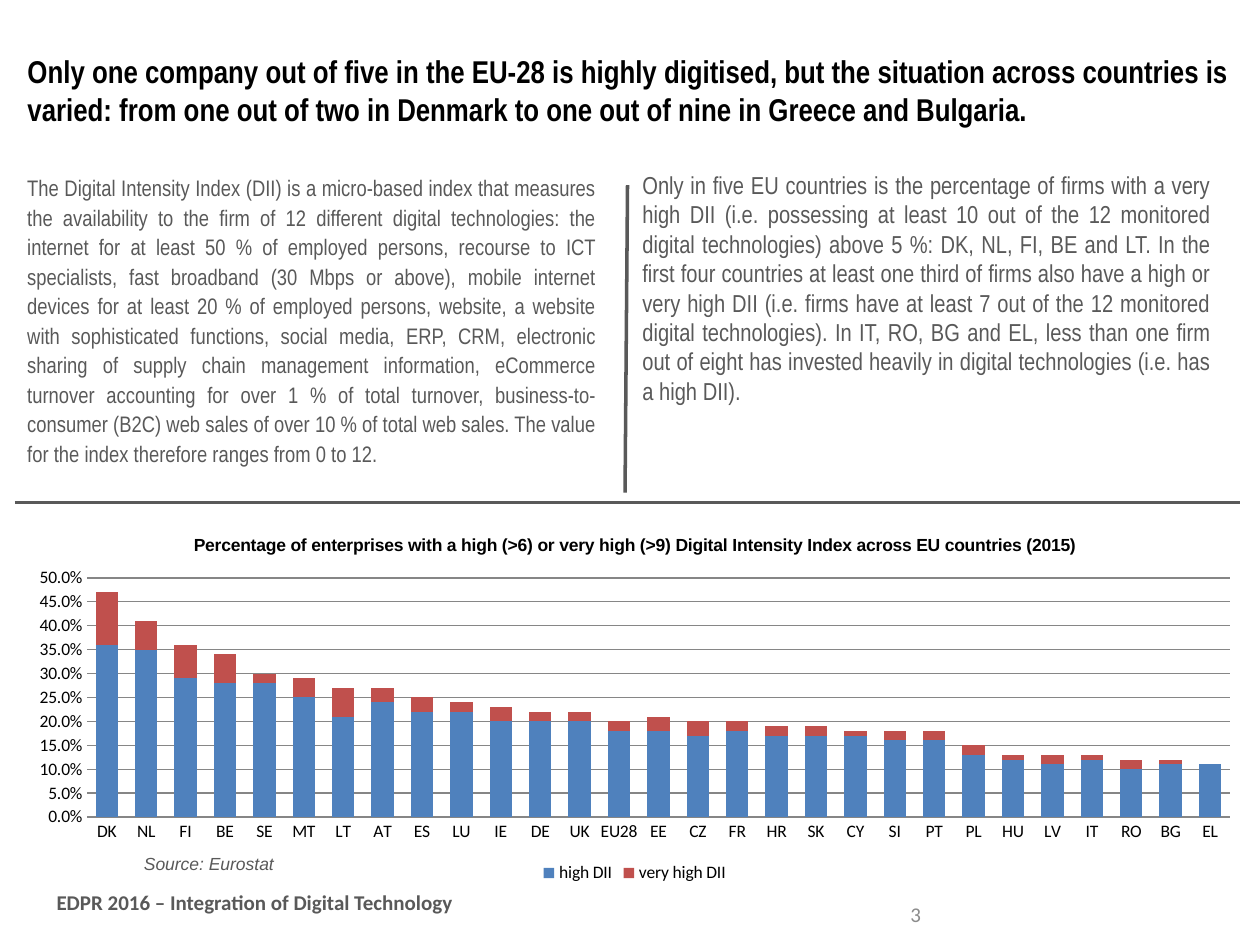
from lxml import etree
from pptx import Presentation
from pptx.chart.data import CategoryChartData
from pptx.dml.color import RGBColor
from pptx.enum.chart import XL_CHART_TYPE as ChartType, XL_LEGEND_POSITION as LegendPosition, XL_TICK_MARK as TickMark
from pptx.enum.shapes import MSO_CONNECTOR as Connector
from pptx.enum.text import MSO_ANCHOR as Anchor, MSO_AUTO_SIZE as AutoSize, PP_ALIGN as Align
from pptx.oxml.ns import qn
from pptx.util import Cm, Pt

COLORS = {"black": "000000", "text": "595959", "number": "8C8C8C",
          "grid": "868686", "high": "4F81BD", "very high": "C0504D"}


def color(name):
    return RGBColor.from_string(COLORS[name])


def write(box, place, text, align, anchor, spacing, name, size, shade, **style):
    """Place a text shape and fill it with one formatted paragraph."""
    box.left, box.top, box.width, box.height = [Cm(value) for value in place]
    frame = box.text_frame
    frame.word_wrap = True
    frame.auto_size = AutoSize.NONE
    frame.vertical_anchor = anchor
    para = frame.paragraphs[0]
    para.alignment = align
    para.line_spacing = spacing
    span = para.add_run()
    span.text = text
    span.font.color.rgb = color(shade)
    for key, value in {"name": name, "size": Pt(size), **style}.items():
        setattr(span.font, key, value)


deck = Presentation()
deck.slide_width, deck.slide_height = Cm(25.4), Cm(19.05)
page = deck.slides.add_slide(deck.slide_layouts[5])

# Dividers
for ends in [(12.65, 3.73, 12.6, 9.93), (0.3, 10.13, 25, 10.13)]:
    divider = page.shapes.add_connector(Connector.STRAIGHT, *[Cm(value) for value in ends])
    divider.line.color.rgb = color("text")
    divider.line.width = Pt(2)
    etree.SubElement(divider._element.spPr, qn("a:effectLst"))

# Texts
write(page.shapes.title, (0.3, 0.3, 24.79, 3.02),
      "Only one company out of five in the EU-28 is highly digitised, but the situation across "
      "countries is varied: from one out of two in Denmark to one out of nine in Greece and Bulgaria.",
      Align.LEFT, Anchor.MIDDLE, 1, "Arial Narrow", 18, "black", bold=True)

index_text = (
    "The Digital Intensity Index (DII) is a micro-based index that measures the availability to the "
    "firm of 12 different digital technologies: the internet for at least 50 % of employed persons, "
    "recourse to ICT specialists, fast broadband (30 Mbps or above), mobile internet devices for at "
    "least 20 % of employed persons, website, a website with sophisticated functions, social media, "
    "ERP, CRM, electronic sharing of supply chain management information, eCommerce turnover "
    "accounting for over 1 % of total turnover, business-to-consumer (B2C) web sales of over 10 % of "
    "total web sales. The value for the index therefore ranges from 0 to 12.")
countries_text = (
    "Only in five EU countries is the percentage of firms with a very high DII (i.e. possessing at "
    "least 10 out of the 12 monitored digital technologies) above 5 %: DK, NL, FI, BE and LT. In the "
    "first four countries at least one third of firms also have a high or very high DII (i.e. firms "
    "have at least 7 out of the 12 monitored digital technologies). In IT, RO, BG and EL, less than "
    "one firm out of eight has invested heavily in digital technologies (i.e. has a high DII).")

texts = [
    ((17.3, 17.91, 1.52, 1.02), "3", Align.RIGHT, Anchor.MIDDLE, 1, "Calibri", 12, "number", {}),
    ((0.3, 3.33, 11.96, 6.4), index_text, Align.JUSTIFY, Anchor.TOP, 1.1, "Arial Narrow", 12.8, "text", {}),
    ((-1.9, 16.92, 12.22, 0.99), "Source: Eurostat", Align.CENTER, Anchor.MIDDLE, 1, "Arial", 10, "text",
     {"italic": True}),
    ((12.7, 3.3, 11.96, 6.4), countries_text, Align.JUSTIFY, Anchor.TOP, 1, "Arial Narrow", 14, "text", {}),
    ((0.89, 17.53, 16.79, 1.3), "EDPR 2016 – Integration of Digital Technology", Align.LEFT, Anchor.MIDDLE, 1,
     "Calibri", 12, "text", {"bold": True}),
]
for *details, style in texts:
    write(page.shapes.add_textbox(0, 0, 0, 0), *details, **style)

# Chart
data = CategoryChartData(number_format="0.0%")
data.categories = ("DK NL FI BE SE MT LT AT ES LU IE DE UK EU28 EE CZ FR HR SK CY SI PT "
                   "PL HU LV IT RO BG EL").split()
percentages = {
    "high": [36, 35, 29, 28, 28, 25, 21, 24, 22, 22, 20, 20, 20, 18, 18, 17, 18, 17, 17, 17, 16, 16,
             13, 12, 11, 12, 10, 11, 11],
    "very high": [11, 6, 7, 6, 2, 4, 6, 3, 3, 2, 3, 2, 2, 2, 3, 3, 2, 2, 2, 1, 2, 2,
                  2, 1, 2, 1, 2, 1, 0],
}
for level, values in percentages.items():
    data.add_series(f"{level} DII", [value / 100 for value in values])
chart = page.shapes.add_chart(ChartType.COLUMN_STACKED, Cm(0.3), Cm(10.41), Cm(24.99), Cm(7.49), data).chart
chart.font.name, chart.font.size = "Calibri", Pt(10)
chart.font.color.rgb = color("black")

chart.has_title = True
chart.chart_title.include_in_layout = False
heading = chart.chart_title.text_frame.paragraphs[0].add_run()
heading.text = ("Percentage of enterprises with a high (>6) or very high (>9) "
                "Digital Intensity Index across EU countries (2015)")
for key, value in {"name": "Arial", "size": Pt(10), "bold": True}.items():
    setattr(heading.font, key, value)
heading.font.color.rgb = color("black")

chart.has_legend = True
chart.legend.position = LegendPosition.BOTTOM
chart.legend.include_in_layout = False

plot = chart.plots[0]
plot.gap_width, plot.overlap, plot.vary_by_categories = 75, 100, False
for series, level in zip(plot.series, percentages):
    series.format.fill.solid()
    series.format.fill.fore_color.rgb = color(level)

for axis in (chart.category_axis, chart.value_axis):
    axis.major_tick_mark = axis.minor_tick_mark = TickMark.NONE
chart.category_axis.format.line.color.rgb = color("grid")
scale = chart.value_axis
scale.minimum_scale, scale.maximum_scale, scale.major_unit = 0, 0.5, 0.05
scale.tick_labels.number_format = "0.0%"
scale.tick_labels.number_format_is_linked = False
scale.format.line.fill.background()
scale.has_major_gridlines = True
scale.major_gridlines.format.line.color.rgb = color("grid")

deck.save("out.pptx")
